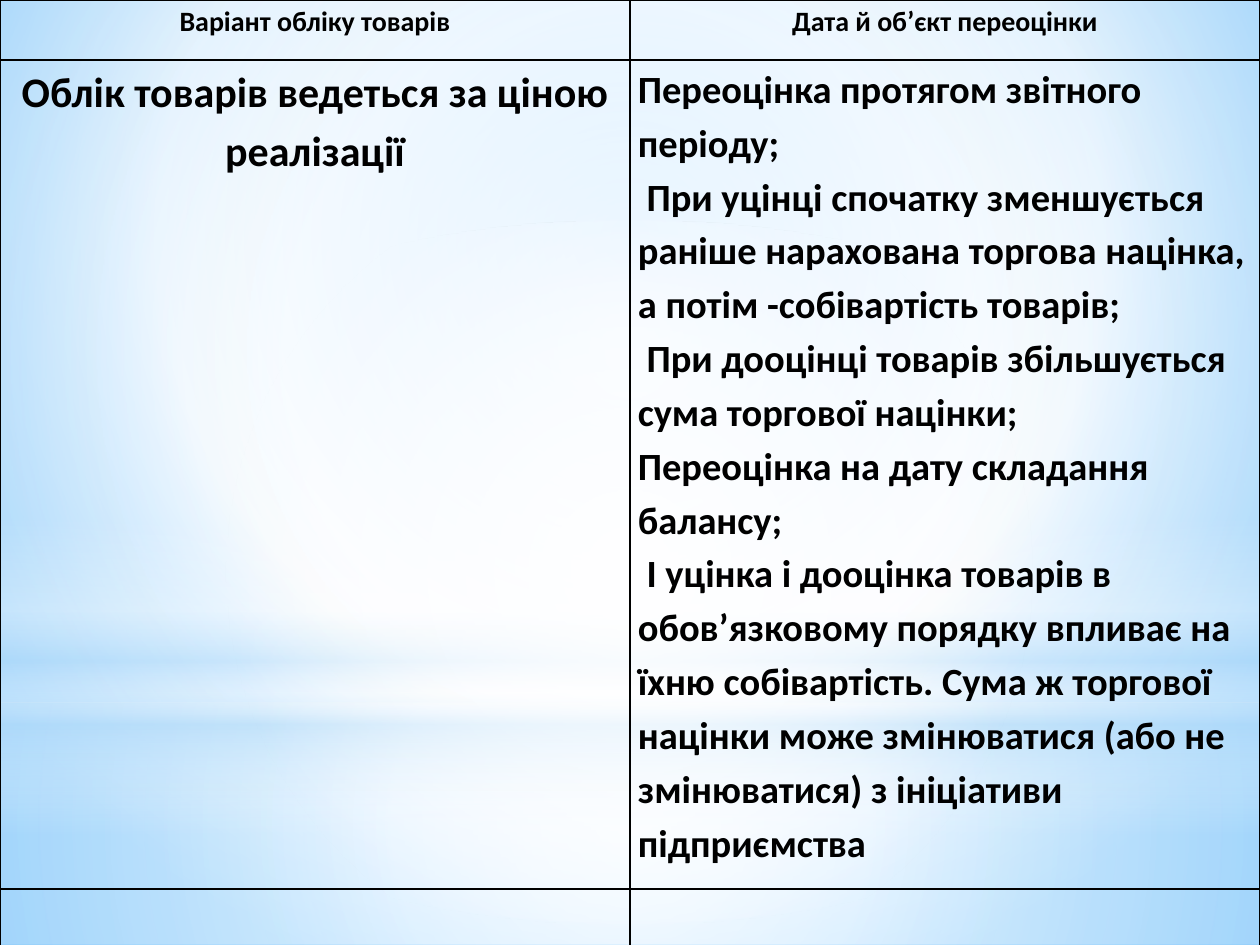
from pptx import Presentation
from pptx.dml.color import RGBColor
from pptx.enum.shapes import MSO_SHAPE
from pptx.enum.text import PP_ALIGN
from pptx.oxml import parse_xml
from pptx.oxml.ns import nsdecls, qn
from pptx.util import Pt

PX = 914400 // 126
WIDTH, HEIGHT = 1260, 945
FONT = "Calibri"
COLORS = {"text": "000000", "border": "000000", "white": "FFFFFF",
          "haze": "B4DCFA", "sky": "9ED5FF", "deep": "5BB9FF"}

CENTER = (50, 50, 50, 50)
BACKDROP = ([(0, "sky", 100), (60, "white", 100), (100, "deep", 100)], (20, 10, 20, 60))
GLOWS = [
    (MSO_SHAPE.RECTANGLE, (0, 703, WIDTH, 242),
     [(0, "white", 91), (37, "white", 76), (100, "haze", 79)], CENTER),
    (MSO_SHAPE.RECTANGLE, (0, 0, WIDTH, 703),
     [(0, "white", 89), (48, "white", 62), (100, "haze", 79)], CENTER),
    (MSO_SHAPE.RECTANGLE, (0, 519, WIDTH, 315),
     [(0, "white", 0), (29, "white", 30), (45, "haze", 40),
      (55, "white", 26), (65, "haze", 60), (100, "white", 0)], None),
    (MSO_SHAPE.OVAL, (0, 221, WIDTH, 703),
     [(0, "white", 100), (56, "white", 0)], CENTER),
]

ROW_HEIGHTS = [60, 829, 510]
CELLS = [
    [(["Варіант обліку товарів"], 16, PP_ALIGN.CENTER),
     (["Дата й об’єкт переоцінки"], 16, PP_ALIGN.CENTER)],
    [(["Облік товарів ведеться за ціною реалізації"], 24, PP_ALIGN.CENTER),
     (["Переоцінка протягом звітного періоду;",
       " При уцінці спочатку зменшується раніше нарахована торгова націнка, "
       "а потім -собівартість товарів;",
       " При дооцінці товарів збільшується сума торгової націнки;",
       "Переоцінка на дату складання балансу;",
       " І уцінка і дооцінка товарів в обов’язковому порядку впливає на їхню "
       "собівартість. Сума ж торгової націнки може змінюватися (або не "
       "змінюватися) з ініціативи підприємства"], 22, PP_ALIGN.LEFT)],
    [([], 18, PP_ALIGN.LEFT), ([], 18, PP_ALIGN.LEFT)],
]


def paint_gradient(fill, properties, stops, focus):
    fill.solid()
    stop_xml = "".join(
        f'<a:gs pos="{position * 1000}"><a:srgbClr val="{COLORS[color]}">'
        f'<a:alpha val="{opacity * 1000}"/></a:srgbClr></a:gs>'
        for position, color, opacity in stops)
    if focus:
        edges = " ".join(f'{side}="{value * 1000}"' for side, value in zip("ltrb", focus))
        direction = f'<a:path path="circle"><a:fillToRect {edges}/></a:path>'
    else:
        direction = '<a:lin ang="5400000" scaled="0"/>'
    gradient = parse_xml(f'<a:gradFill {nsdecls("a")} rotWithShape="1">'
                         f'<a:gsLst>{stop_xml}</a:gsLst>{direction}</a:gradFill>')
    properties.replace(properties.find(qn("a:solidFill")), gradient)


def add_borders(cell):
    properties = cell._tc.get_or_add_tcPr()
    for index, side in enumerate("LRTB"):
        properties.insert(index, parse_xml(
            f'<a:ln{side} {nsdecls("a")} w="{Pt(1)}"><a:solidFill>'
            f'<a:srgbClr val="{COLORS["border"]}"/></a:solidFill></a:ln{side}>'))


def fill_cell(cell, paragraphs, size, alignment):
    cell.fill.background()
    add_borders(cell)
    cell.margin_left = cell.margin_right = 8 * PX
    cell.margin_top = cell.margin_bottom = 0
    cell.text_frame.text = "\n".join(paragraphs)
    for paragraph in cell.text_frame.paragraphs:
        paragraph.alignment = alignment
        paragraph.line_spacing = 1.15
        for run in paragraph.runs:
            run.font.name = FONT
            run.font.size = Pt(size)
            run.font.bold = True
            run.font.color.rgb = RGBColor.from_string(COLORS["text"])


def main():
    deck = Presentation()
    deck.slide_width, deck.slide_height = WIDTH * PX, HEIGHT * PX
    slide = deck.slides.add_slide(deck.slide_layouts[6])

    backdrop = slide.background.fill
    backdrop.solid()
    paint_gradient(backdrop, slide.element.find(".//" + qn("p:bgPr")), *BACKDROP)

    for preset, box, stops, focus in GLOWS:
        glow = slide.shapes.add_shape(preset, *(length * PX for length in box))
        glow.shadow.inherit = False
        glow.line.fill.background()
        paint_gradient(glow.fill, glow.element.spPr, stops, focus)

    revaluation = slide.shapes.add_table(
        len(CELLS), 2, 0, 0, WIDTH * PX, sum(ROW_HEIGHTS) * PX).table
    revaluation.first_row = revaluation.horz_banding = False
    for row, height, contents in zip(revaluation.rows, ROW_HEIGHTS, CELLS):
        row.height = height * PX
        for cell, content in zip(row.cells, contents):
            fill_cell(cell, *content)

    deck.save("out.pptx")


if __name__ == "__main__":
    main()
